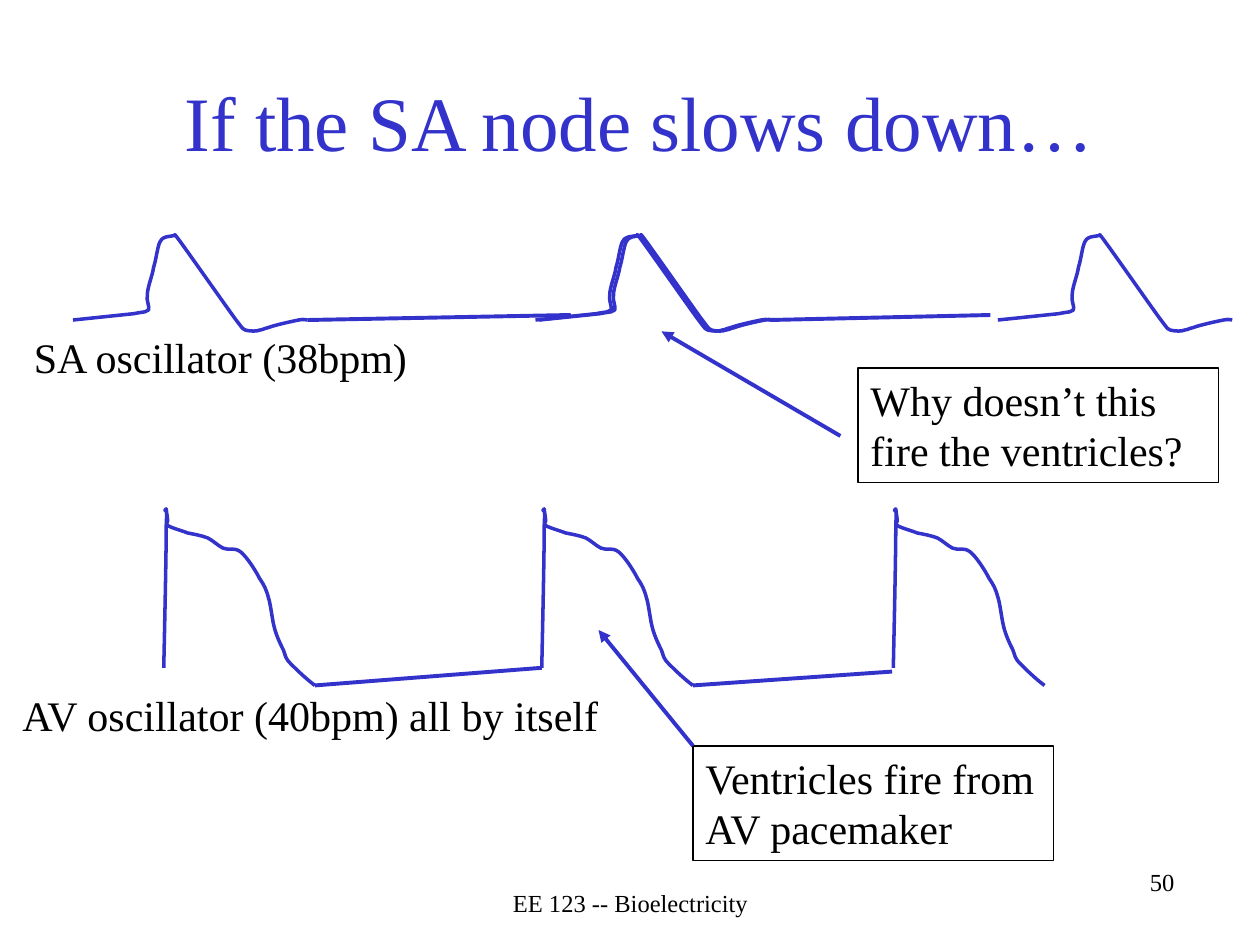
import pptx
import pptx.dml.color
import pptx.enum.shapes
import pptx.enum.text
import pptx.oxml
import pptx.oxml.ns
import pptx.util

Inches = pptx.util.Inches
ALIGN = pptx.enum.text.PP_ALIGN
FONT = "Times New Roman"
BLUE = "3333CC"
BLACK = "000000"

# Each wave is a start point followed by segments: (end,) is a straight line,
# (control, control, end) is a Bezier curve.
SA_START = (0.58, 2.54)
SA_SEGMENTS = [
    ((1.06, 2.49),),
    ((1.16, 2.47), (1.16, 2.48), (1.18, 2.46)),
    ((1.19, 2.43), (1.16, 2.39), (1.17, 2.34)),
    ((1.17, 2.28), (1.21, 2.19), (1.22, 2.12)),
    ((1.24, 2.06), (1.25, 1.96), (1.27, 1.92)),
    ((1.29, 1.88), (1.31, 1.89), (1.32, 1.88)),
    ((1.34, 1.88), (1.36, 1.87), (1.38, 1.87)),
    ((1.4, 1.88), (1.36, 1.82), (1.44, 1.93)),
    ((1.52, 2.04), (1.78, 2.41), (1.86, 2.52)),
    ((1.95, 2.64), (1.92, 2.6), (1.95, 2.62)),
    ((1.99, 2.63), (2.04, 2.63), (2.06, 2.62)),
    ((2.09, 2.62), (2.08, 2.61), (2.13, 2.6)),
    ((2.18, 2.58), (2.32, 2.55), (2.37, 2.54)),
    ((2.42, 2.53), (2.43, 2.54), (2.44, 2.54)),
]
SA_SHIFTS = (0, 3.67, 3.7, 7.34)

AV_START = (1.3, 5.3)
AV_SEGMENTS = [
    ((1.31, 4.84), (1.32, 4.38), (1.32, 4.17)),
    ((1.33, 3.97), (1.31, 4.06), (1.31, 4.05)),
    ((1.32, 4.04), (1.33, 4.1), (1.33, 4.12)),
    ((1.34, 4.14), (1.31, 4.16), (1.33, 4.17)),
    ((1.36, 4.19), (1.44, 4.21), (1.49, 4.23)),
    ((1.54, 4.24), (1.6, 4.25), (1.65, 4.27)),
    ((1.69, 4.29), (1.73, 4.33), (1.77, 4.35)),
    ((1.81, 4.37), (1.86, 4.34), (1.91, 4.38)),
    ((1.96, 4.42), (2.03, 4.53), (2.06, 4.59)),
    ((2.1, 4.65), (2.11, 4.67), (2.13, 4.74)),
    ((2.15, 4.8), (2.16, 4.92), (2.18, 4.99)),
    ((2.2, 5.06), (2.23, 5.12), (2.25, 5.16)),
    ((2.27, 5.21), (2.26, 5.22), (2.31, 5.27)),
    ((2.35, 5.31), (2.42, 5.38), (2.5, 5.44)),
]
AV_SHIFTS = (0, 3, 5.79)

BASELINES = [
    ((2.44, 2.54), (4.53, 2.5)),
    ((6.11, 2.54), (7.86, 2.5)),
    ((2.5, 5.44), (4.3, 5.3)),
    ((5.5, 5.44), (7.08, 5.33)),
]
ARROWS = [
    ((5.5, 5.92), (4.75, 5)),
    ((6.67, 3.46), (5.25, 2.63)),
]


def color(value):
    return pptx.dml.color.RGBColor.from_string(value)


def set_line(line, value, width):
    line.color.rgb = color(value)
    line.width = pptx.util.Pt(width)


def element(tag, attributes=""):
    return pptx.oxml.parse_xml(f'<a:{tag} {pptx.oxml.ns.nsdecls("a")} {attributes}/>')


def write(shape, text, size, value=BLACK, align=ALIGN.LEFT):
    para = shape.text_frame.paragraphs[0]
    para.alignment = align
    span = para.add_run()
    span.text = text
    span.font.name = FONT
    span.font.size = pptx.util.Pt(size)
    span.font.color.rgb = color(value)


def add_title(page, text):
    title = page.shapes.title
    title.left, title.top = Inches(0.75), Inches(0.33)
    title.width, title.height = Inches(8.65), Inches(1.25)
    title.text_frame.vertical_anchor = pptx.enum.text.MSO_ANCHOR.MIDDLE
    write(title, text, 44, BLUE, ALIGN.CENTER)


def add_label(page, area, text, size=24, align=ALIGN.LEFT):
    box = page.shapes.add_textbox(*map(Inches, area))
    box.text_frame.word_wrap = True
    write(box, text, size, align=align)


def add_callout(page, left, top, text):
    box = page.shapes.add_shape(
        pptx.enum.shapes.MSO_SHAPE.RECTANGLE,
        Inches(left), Inches(top), Inches(2.86), Inches(0.91))
    box.shadow.inherit = False
    box.fill.background()
    set_line(box.line, BLACK, 0)  # zero width draws a hairline
    box.text_frame.word_wrap = True
    box.text_frame.auto_size = pptx.enum.text.MSO_AUTO_SIZE.SHAPE_TO_FIT_TEXT
    box.text_frame.vertical_anchor = pptx.enum.text.MSO_ANCHOR.TOP
    write(box, text, 24)


def bend(wave, segments, shift):
    """Turn the straight segments that have control points into Bezier curves."""
    straight = list(wave._element.iter(pptx.oxml.ns.qn("a:lnTo")))
    for line, (*controls, _) in zip(straight, segments):
        if not controls:
            continue
        curve = element("cubicBezTo")
        for x, y in controls:
            across = Inches(x + shift) - wave.left
            down = Inches(y) - wave.top
            curve.append(element("pt", f'x="{across}" y="{down}"'))
        curve.append(line[0])
        line.getparent().replace(line, curve)


def add_wave(page, start, segments, shift):
    builder = page.shapes.build_freeform(Inches(start[0] + shift), Inches(start[1]))
    ends = [segment[-1] for segment in segments]
    builder.add_line_segments(
        [(Inches(x + shift), Inches(y)) for x, y in ends], close=False)
    wave = builder.convert_to_shape()
    bend(wave, segments, shift)
    wave.shadow.inherit = False
    wave.fill.background()
    set_line(wave.line, BLUE, 2)


def add_line(page, start, end, arrow=False):
    line = page.shapes.add_connector(
        pptx.enum.shapes.MSO_CONNECTOR.STRAIGHT, *map(Inches, start + end))
    set_line(line.line, BLUE, 2.25)
    if arrow:
        line.line._get_or_add_ln().append(element("tailEnd", 'type="triangle"'))
    line._element.spPr.append(element("effectLst"))


def main():
    deck = pptx.Presentation()
    deck.slide_width, deck.slide_height = Inches(10), Inches(7.5)
    page = deck.slides.add_slide(deck.slide_layouts[5])

    add_title(page, "If the SA node slows down…")
    add_label(page, (6.25, 6.83, 3.17, 0.5), "50", 14, ALIGN.RIGHT)
    add_label(page, (3.42, 7, 3.17, 0.33), "EE 123 -- Bioelectricity", 14, ALIGN.CENTER)
    add_label(page, (0.17, 2.58, 4, 0.5), "SA oscillator (38bpm)")
    add_label(page, (0.08, 5.42, 4.97, 0.5), "AV oscillator (40bpm) all by itself")

    for shift in SA_SHIFTS:
        add_wave(page, SA_START, SA_SEGMENTS, shift)
    for shift in AV_SHIFTS:
        add_wave(page, AV_START, AV_SEGMENTS, shift)
    for start, end in BASELINES:
        add_line(page, start, end)

    add_callout(page, 6.81, 2.92, "Why doesn’t this fire the ventricles?")
    add_callout(page, 5.5, 5.92, "Ventricles fire from AV pacemaker")
    for start, end in ARROWS:
        add_line(page, start, end, arrow=True)

    deck.save("out.pptx")


if __name__ == "__main__":
    main()
